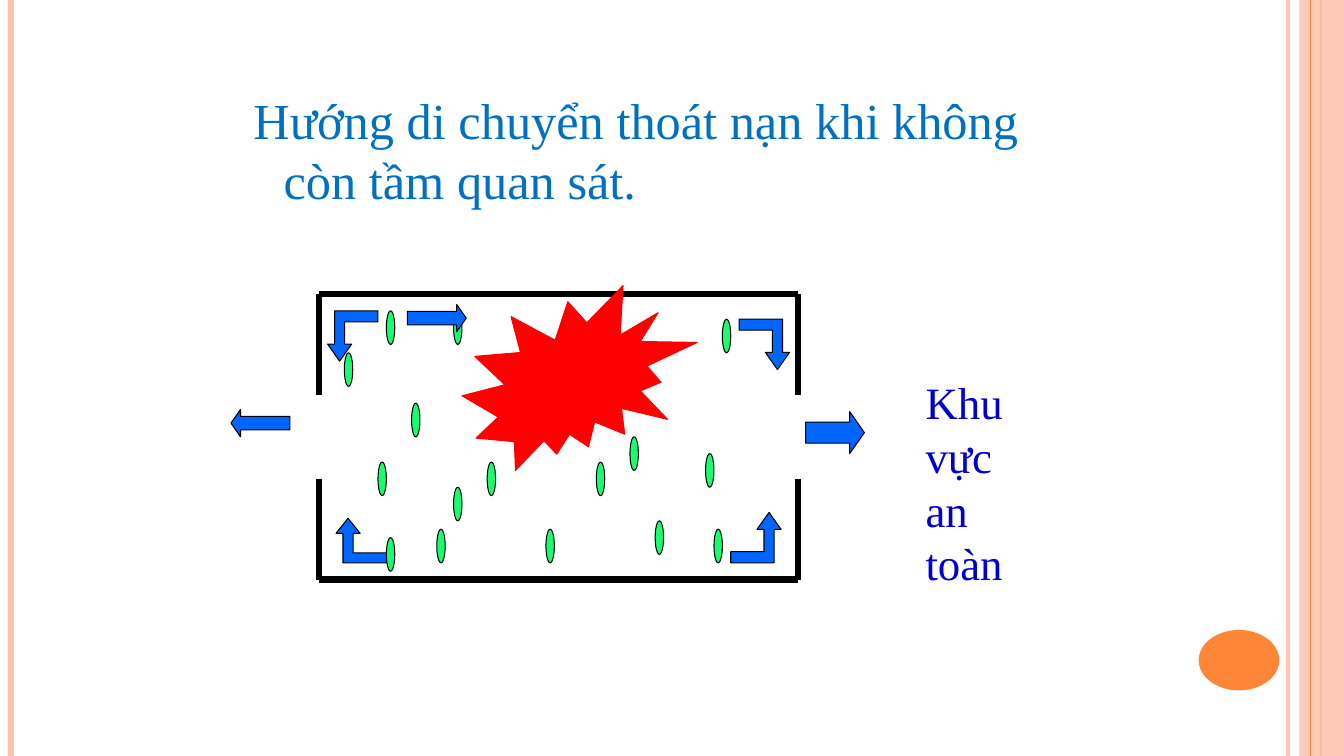
"""Build the slide on escape directions when visibility is lost."""
from lxml.etree import SubElement
from pptx import Presentation
from pptx.dml.color import RGBColor
from pptx.enum.shapes import MSO_CONNECTOR as Connector, MSO_SHAPE as Shape
from pptx.oxml.ns import qn
from pptx.util import Cm, Pt

FONT = "Times New Roman"
COLORS = {
    "rail": "FEC3AE", "accent": "FE8637", "title": "0070C0", "label": "0000CC",
    "wall": "000000", "fire": "FF0000", "person": "1AFC70", "arrow": "0066FF",
}
TITLE = "Hướng di chuyển thoát nạn khi không còn tầm quan sát."
LABEL = "Khu vực an toàn"

GRID = Cm(2.54) / 12
WIDTH, HEIGHT = 160, 90
LEFT, TOP, RIGHT, BOTTOM = 38, 35, 95, 69
DOOR_TOP, DOOR_BOTTOM = 47, 57
BACK_RAILS = [(153.35, "rail", 3), (1.3, "rail", 4.5), (157.3, "accent", 1.5)]
FRONT_RAIL = (156, "accent", 0.75)
BAND = (154.7, 0, 5.3, HEIGHT)
BADGE = (142.7, 75, 9.6, 7.2)
FIRE = (55, 34, 28, 22)
PEOPLE = [
    (41, 42), (54, 37), (46, 37), (49, 48), (52, 63), (46, 64), (45, 55), (65, 63),
    (78, 62), (85, 63), (84, 54), (86, 38), (71, 55), (75, 52), (54, 58), (58, 55),
]
STRAIGHT_ARROWS = [
    ((27.5, 48.75, 7, 3.25), 0),
    ((95.9, 49, 7, 5), 180),
    ((48.5, 36.25, 7, 3.25), 180),
]
ELBOW = [
    (0.76, 0), (0.52, 0.34), (0.66, 0.34), (0.66, 0.78), (0, 0.78),
    (0, 1), (0.86, 1), (0.86, 0.34), (1, 0.34),
]
ELBOW_ARROWS = [
    ((87, 61, 6, 6), False, False),
    ((39, 37, 6, 6), True, True),
    ((40, 61.7, 6, 5.3), True, False),
    ((88, 38, 6, 6), False, True),
]


def grid(*values):
    return [round(value * GRID) for value in values]


def rgb(name):
    return RGBColor.from_string(COLORS[name])


def paint(shape, fill, line=None):
    shape.shadow.inherit = False
    shape.fill.solid()
    shape.fill.fore_color.rgb = rgb(fill)
    if line:
        shape.line.color.rgb = rgb(line)
        shape.line.width = Pt(0.75)
    else:
        shape.line.fill.background()
    return shape


def add_shape(slide, kind, box, fill, line=None):
    return paint(slide.shapes.add_shape(kind, *grid(*box)), fill, line)


def set_opacity(fill_format, percent):
    color = fill_format._xPr.find(".//" + qn("a:srgbClr"))
    SubElement(color, qn("a:alpha"), val=str(percent * 1000))


def add_line(slide, ends, color, width):
    line = slide.shapes.add_connector(Connector.STRAIGHT, *grid(*ends))
    line.line.color.rgb = rgb(color)
    line.line.width = Pt(width)
    SubElement(line._element.spPr, qn("a:effectLst"))
    return line


def add_rail(slide, x, color, width):
    return add_line(slide, (x, 0, x, HEIGHT), color, width)


def add_elbow(slide, box, flip_x, flip_y):
    left, top, width, height = box
    points = [
        grid(left + width * (1 - x if flip_x else x),
             top + height * (1 - y if flip_y else y))
        for x, y in ELBOW
    ]
    builder = slide.shapes.build_freeform(*points[0])
    builder.add_line_segments(points[1:], close=True)
    paint(builder.convert_to_shape(), "arrow", "wall")


def add_text(slide, box, text, size, color, margin_top):
    text_frame = slide.shapes.add_textbox(*grid(*box)).text_frame
    text_frame.word_wrap = True
    text_frame.margin_top = margin_top
    text_frame.text = text
    paragraph = text_frame.paragraphs[0]
    font = paragraph.runs[0].font
    font.name, font.size, font.color.rgb = FONT, Pt(size), rgb(color)
    return paragraph


def add_frame(slide):
    rails = [add_rail(slide, *rail) for rail in BACK_RAILS]
    set_opacity(rails[0].line.fill, 93)
    band = add_shape(slide, Shape.RECTANGLE, BAND, "rail")
    set_opacity(band.fill, 87)
    add_rail(slide, *FRONT_RAIL)
    add_shape(slide, Shape.OVAL, BADGE, "accent")


def add_room(slide):
    walls = [(LEFT, y, RIGHT, y) for y in (TOP, BOTTOM)]
    walls += [
        (x, start, x, end)
        for x in (LEFT, RIGHT)
        for start, end in ((TOP, DOOR_TOP), (DOOR_BOTTOM, BOTTOM))
    ]
    for wall in walls:
        add_line(slide, wall, "wall", 4.5)
    add_shape(slide, Shape.EXPLOSION2, FIRE, "fire", "fire")
    for x, y in PEOPLE:
        add_shape(slide, Shape.OVAL, (x, y, 1, 4), "person", "wall")
    for box, rotation in STRAIGHT_ARROWS:
        arrow = add_shape(slide, Shape.LEFT_ARROW, box, "arrow", "wall")
        arrow.adjustments[0], arrow.adjustments[1] = 0.5, 0.35
        arrow.rotation = rotation
    for elbow in ELBOW_ARROWS:
        add_elbow(slide, *elbow)


def main():
    presentation = Presentation()
    presentation.slide_width, presentation.slide_height = grid(WIDTH, HEIGHT)
    slide = presentation.slides.add_slide(presentation.slide_layouts[6])
    add_frame(slide)
    title = add_text(slide, (29, 9, 102, 71), TITLE, 36, "title", Cm(0.34))
    indent = Cm(0.76)
    properties = title._p.get_or_add_pPr()
    properties.set("marL", str(indent))
    properties.set("indent", str(-indent))
    add_room(slide)
    add_text(slide, (109, 44, 15, 27), LABEL, 32, "label", Cm(0.13))
    presentation.save("out.pptx")


if __name__ == "__main__":
    main()
